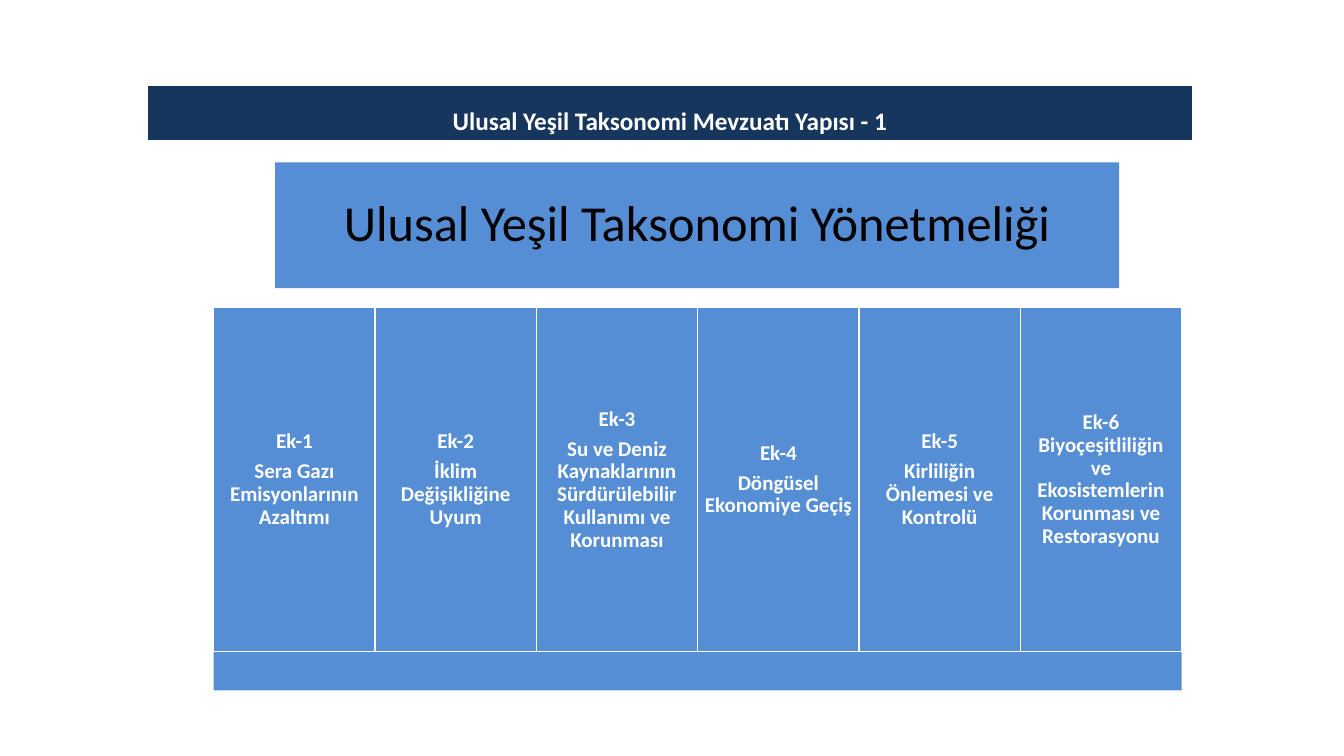
from lxml import etree
from pptx import Presentation
from pptx.dml.color import RGBColor
from pptx.enum.shapes import MSO_SHAPE
from pptx.enum.text import MSO_ANCHOR, PP_ALIGN
from pptx.oxml.ns import qn
from pptx.util import Inches, Pt

# Content
HEADER = "Ulusal Yeşil Taksonomi Mevzuatı Yapısı - 1"
REGULATION = "Ulusal Yeşil Taksonomi Yönetmeliği"
ANNEXES = [
    ["Ek-1", "Sera Gazı Emisyonlarının Azaltımı"],
    ["Ek-2", "İklim Değişikliğine Uyum"],
    ["Ek-3", "Su ve Deniz Kaynaklarının Sürdürülebilir Kullanımı ve Korunması"],
    ["Ek-4", "Döngüsel Ekonomiye Geçiş"],
    ["Ek-5", "Kirliliğin Önlemesi ve Kontrolü"],
    ["Ek-6 Biyoçeşitliliğin ve Ekosistemlerin Korunması ve Restorasyonu"],
]


class Theme:
    font = "Calibri"
    navy = RGBColor(0x17, 0x36, 0x5D)
    blue = RGBColor(0x55, 0x8E, 0xD5)
    white = RGBColor(0xFF, 0xFF, 0xFF)
    black = RGBColor(0, 0, 0)
    header_size, title_size, annex_size = 18, 36, 15


# Layout, in inches
COL_LEFT, COL_TOP, COL_W, COL_H = 2.12, 3.05, 1.6, 3.42
BASE_H = 0.38


def style_paragraph(p, size, color, bold, spacing):
    p.alignment = PP_ALIGN.CENTER
    p.line_spacing = spacing
    for r in p.runs:
        r.font.name = Theme.font
        r.font.size = Pt(size)
        r.font.bold = bold
        r.font.color.rgb = color


def add_block(s, left, top, width, height, outlined=False):
    sp = s.shapes.add_shape(MSO_SHAPE.RECTANGLE, Inches(left), Inches(top),
                            Inches(width), Inches(height))
    sp.shadow.inherit = False
    sp.fill.solid()
    sp.fill.fore_color.rgb = Theme.blue
    if outlined:
        sp.line.color.rgb = Theme.white
        sp.line.width = Pt(1)
    else:
        sp.line.fill.background()
    return sp


def write_block(sp, lines, size, color, bold, inset):
    tf = sp.text_frame
    tf.word_wrap = True
    tf.vertical_anchor = MSO_ANCHOR.MIDDLE
    tf.margin_left = tf.margin_right = Inches(inset)
    tf.margin_top = tf.margin_bottom = Inches(inset)
    tf.text = "\n".join(lines)
    for p in tf.paragraphs:
        style_paragraph(p, size, color, bold, 0.9)
        p.space_after = Pt(size * 0.35)


def set_borders(cell, bottom):
    tc_pr = cell._tc.get_or_add_tcPr()
    widths = {"a:lnL": 1, "a:lnR": 1, "a:lnT": 1, "a:lnB": bottom}
    for i, (tag, width) in enumerate(widths.items()):
        ln = etree.Element(qn(tag), w=str(Pt(width)))
        fill = etree.SubElement(ln, qn("a:solidFill"))
        etree.SubElement(fill, qn("a:srgbClr"), val=str(Theme.white))
        tc_pr.insert(i, ln)


def add_header(s):
    table = s.shapes.add_table(2, 1, Inches(1.46), Inches(0.85),
                               Inches(10.37), Inches(1.11)).table
    rows = [(HEADER, 0.55, Theme.navy, 3), ("", 0.56, Theme.white, 1)]
    for i, (text, height, color, bottom) in enumerate(rows):
        table.rows[i].height = Inches(height)
        cell = table.cell(i, 0)
        cell.text = text
        cell.fill.solid()
        cell.fill.fore_color.rgb = color
        set_borders(cell, bottom)
    style_paragraph(table.cell(0, 0).text_frame.paragraphs[0],
                    Theme.header_size, Theme.white, True, 1.5)


def main():
    prs = Presentation()
    prs.slide_width, prs.slide_height = Inches(13.33), Inches(7.5)
    s = prs.slides.add_slide(prs.slide_layouts[6])

    # Header band
    add_header(s)

    # Regulation title
    title = add_block(s, 2.73, 1.61, 8.37, 1.25)
    write_block(title, [REGULATION], Theme.title_size, Theme.black, False, 0.15)

    # Annex columns
    for i, lines in enumerate(ANNEXES):
        sp = add_block(s, COL_LEFT + i * COL_W, COL_TOP, COL_W, COL_H, outlined=True)
        write_block(sp, lines, Theme.annex_size, Theme.white, True, 0.06)

    # Base strip
    add_block(s, COL_LEFT, COL_TOP + COL_H, COL_W * len(ANNEXES), BASE_H)

    prs.save("out.pptx")


if __name__ == "__main__":
    main()
